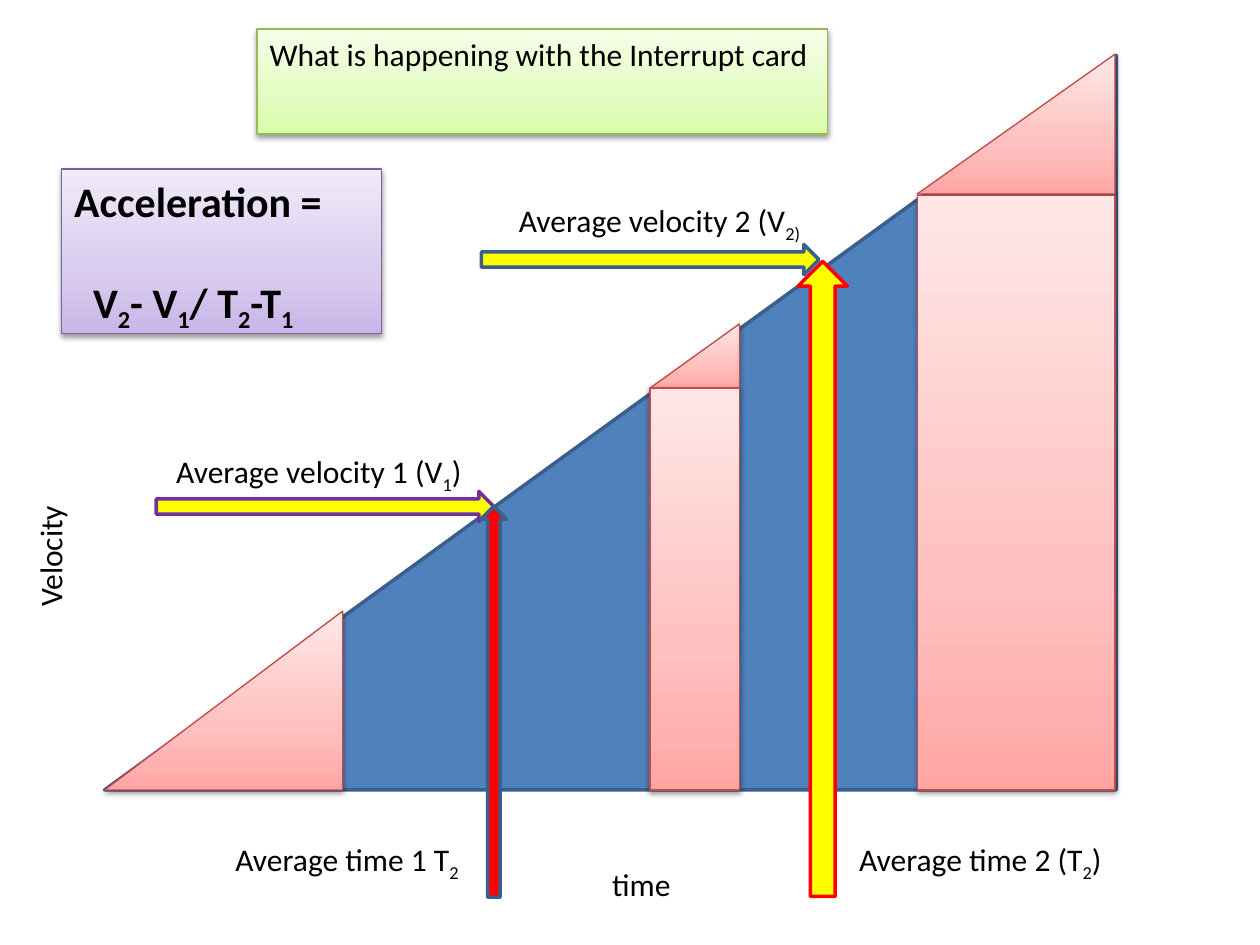
"""Build the interrupt card slide: a velocity-time graph with average velocities."""
from lxml import etree
from pptx import Presentation
from pptx import util as u
from pptx.dml.color import RGBColor
from pptx.enum import shapes, text
from pptx.oxml import parse_xml
from pptx.oxml.ns import nsdecls, qn

FONT = "Calibri"
BLACK = RGBColor(0x00, 0x00, 0x00)
BLUE = RGBColor(0x4F, 0x81, 0xBD)
NAVY = RGBColor(0x3A, 0x5F, 0x8C)
YELLOW = RGBColor(0xFF, 0xFF, 0x00)
RED = RGBColor(0xFF, 0x00, 0x00)
VIOLET = RGBColor(0x70, 0x30, 0xA0)
BRICK = RGBColor(0xBF, 0x4C, 0x48)
OLIVE = RGBColor(0x98, 0xB9, 0x55)
PURPLE = RGBColor(0x7D, 0x60, 0xA0)
PINKS = [RGBColor(0xFF, 0xA6, 0xA5), RGBColor(0xFF, 0xC0, 0xBF), RGBColor(0xFF, 0xE7, 0xE7)]
GREENS = [RGBColor(0xDA, 0xFD, 0xA7), RGBColor(0xE4, 0xFC, 0xC2), RGBColor(0xF5, 0xFF, 0xE7)]
LILACS = [RGBColor(0xC9, 0xB5, 0xE8), RGBColor(0xD8, 0xCB, 0xEE), RGBColor(0xF0, 0xEA, 0xF9)]
STOPS = (0, 35, 100)

TITLE = ("What is happening with the Interrupt card", (2.04, 0.23, 4.53, 0.4))
FORMULA = (["Acceleration =", "V_2_- V_1_/ T_2_-T_1_"], (0.49, 1.34, 2.54, 1.31))
GRAPH = (0.83, 0.44, 8.03, 5.83)
BASELINE = 6.27
WEDGES = [(0.83, 4.85, 1.89, 1.42), (5.16, 2.57, 0.71, 0.51), (7.28, 0.43, 1.57, 1.11)]
COLUMNS = [(5.16, 3.08, 0.71), (7.28, 1.55, 1.57)]
ARROWS = [
    ((1.24, 3.9, 2.68, 0.24), 0, YELLOW, VIOLET),
    ((2.37, 5.47, 3.1, 0.2), 270, RED, NAVY),
    ((4.01, 4.4, 5.04, 0.39), 270, YELLOW, RED),
    ((3.82, 1.94, 2.68, 0.24), 0, YELLOW, NAVY),
]
LABELS = [
    ("time", (4.76, 6.82, 0.67, 0.4), 0),
    ("Velocity", (-0.11, 4.21, 1.01, 0.4), 270),
    ("Average velocity 2 (V_2)_", (4.02, 1.55, 2.47, 0.4), 0),
    ("Average velocity 1 (V_1_)", (1.3, 3.54, 2.55, 0.4), 0),
    ("Average time 1 T_2_", (1.77, 6.62, 2, 0.4), 0),
    ("Average time 2 (T_2_)", (6.72, 6.62, 2.2, 0.4), 0),
]


def inches(box):
    return [u.Inches(v) for v in box]


def outline(sp, color, width):
    sp.line.color.rgb = color
    sp.line.width = u.Pt(width)
    sp.shadow.inherit = False


def add_solid(s, kind, box, fill, line):
    sp = s.shapes.add_shape(kind, *inches(box))
    sp.fill.solid()
    sp.fill.fore_color.rgb = fill
    outline(sp, line, 2)
    return sp


def shade(sp, colors, line):
    sp.fill.background()
    outline(sp, line, 0.75)
    props = sp._element.spPr
    stops = "".join(f'<a:gs pos="{pos * 1000}"><a:srgbClr val="{color}"/></a:gs>'
                    for pos, color in zip(STOPS, colors))
    props.replace(props.find(qn("a:noFill")), parse_xml(
        f'<a:gradFill {nsdecls("a")} rotWithShape="1"><a:gsLst>{stops}</a:gsLst>'
        '<a:lin ang="16200000" scaled="0"/></a:gradFill>'))
    shadow = etree.SubElement(props.find(qn("a:effectLst")), qn("a:outerShdw"),
                              blurRad="40000", dist="20000", dir="5400000", rotWithShape="0")
    color = etree.SubElement(shadow, qn("a:srgbClr"), val="000000")
    etree.SubElement(color, qn("a:alpha"), val="38000")


def flip(sp):
    sp._element.spPr.find(qn("a:xfrm")).set("flipH", "1")


def write(sp, lines, size=18, bold=False, wrap=False):
    tf = sp.text_frame
    tf.word_wrap = wrap
    tf.auto_size = text.MSO_AUTO_SIZE.SHAPE_TO_FIT_TEXT
    tf.vertical_anchor = text.MSO_ANCHOR.TOP
    for i, line in enumerate(lines):
        p = tf.add_paragraph() if i else tf.paragraphs[0]
        p.alignment = text.PP_ALIGN.LEFT
        p.font.name, p.font.size, p.font.bold = FONT, u.Pt(size), bold
        p.font.color.rgb = BLACK
        for j, part in enumerate(line.split("_")):
            if part:
                r = p.add_run()
                r.text = part
                if j % 2:
                    r._r.get_or_add_rPr().set("baseline", "-25000")
    return tf


def main():
    prs = Presentation()
    prs.slide_width, prs.slide_height = u.Inches(10), u.Inches(7.5)
    s = prs.slides.add_slide(prs.slide_layouts[5])
    kinds = shapes.MSO_SHAPE

    title = s.shapes.title
    title.left, title.top, title.width, title.height = inches(TITLE[1])
    shade(title, GREENS, OLIVE)
    write(title, [TITLE[0]])

    flip(add_solid(s, kinds.RIGHT_TRIANGLE, GRAPH, BLUE, NAVY))
    for box in WEDGES:
        wedge = s.shapes.add_shape(kinds.RIGHT_TRIANGLE, *inches(box))
        flip(wedge)
        shade(wedge, PINKS, BRICK)
    for left, top, width in COLUMNS:
        column = s.shapes.add_shape(kinds.RECTANGLE, *inches((left, top, width, BASELINE - top)))
        shade(column, PINKS, BRICK)

    for box, rotation, fill, line in ARROWS:
        add_solid(s, kinds.RIGHT_ARROW, box, fill, line).rotation = rotation

    for label, box, rotation in LABELS:
        sp = s.shapes.add_textbox(*inches(box))
        sp.rotation = rotation
        write(sp, [label])

    lines, box = FORMULA
    formula = s.shapes.add_shape(kinds.RECTANGLE, *inches(box))
    shade(formula, LILACS, PURPLE)
    ratio = write(formula, lines, 24, True, True).paragraphs[1]
    ratio.space_before = u.Pt(29)
    props = ratio._p.get_or_add_pPr()
    props.set("marL", str(u.Inches(0.15)))
    props.set("indent", "0")

    prs.save("out.pptx")


if __name__ == "__main__":
    main()
